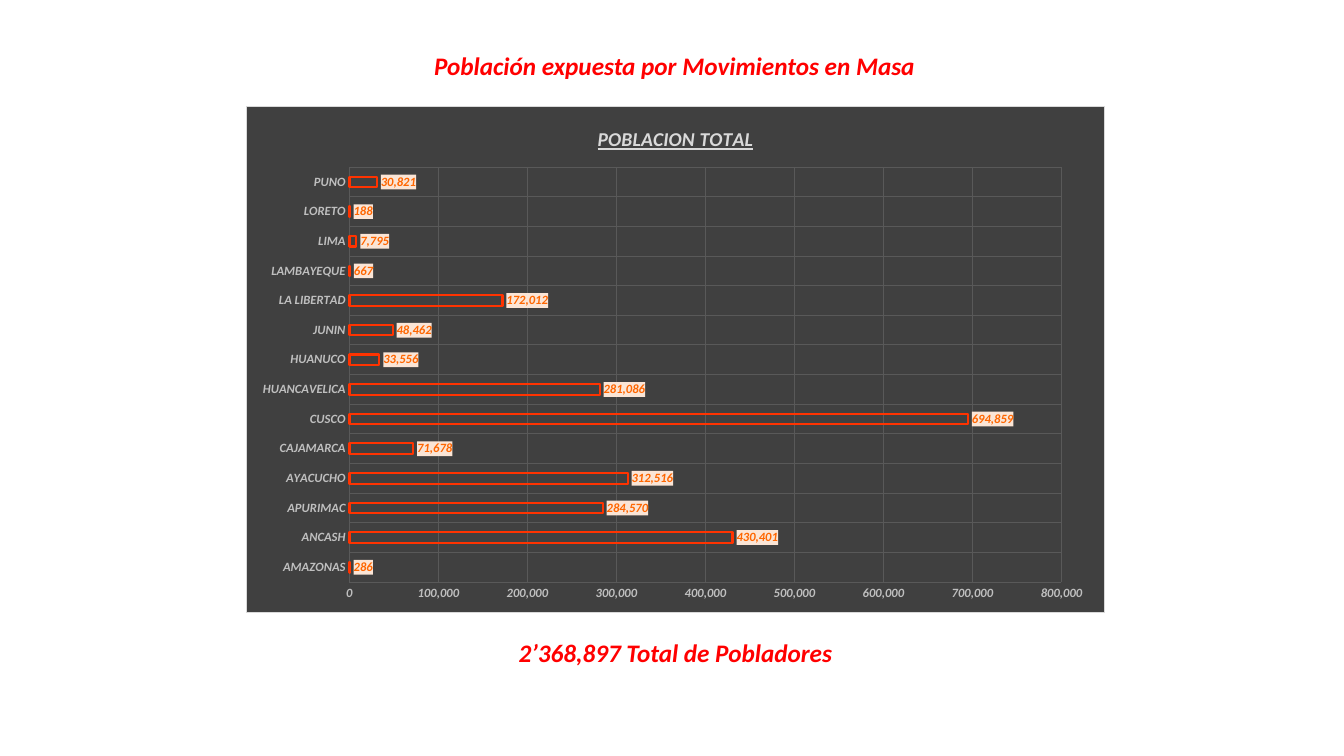
from lxml.etree import SubElement
from pptx import Presentation
from pptx.chart.data import CategoryChartData
from pptx.dml.color import RGBColor
from pptx.enum.chart import XL_CHART_TYPE, XL_LABEL_POSITION, XL_TICK_MARK
from pptx.enum.text import MSO_ANCHOR, MSO_AUTO_SIZE, PP_ALIGN
from pptx.oxml import parse_xml
from pptx.oxml.ns import nsdecls, qn
from pptx.util import Pt

PX = 914400 / 100.8
RED = RGBColor(0xFF, 0x00, 0x00)
FLAME = RGBColor(0xFF, 0x33, 0x00)
ORANGE = RGBColor(0xFF, 0x66, 0x00)
CREAM = RGBColor(0xFB, 0xE5, 0xD6)
DARK = RGBColor(0x40, 0x40, 0x40)
GRID = RGBColor(0x59, 0x59, 0x59)
SILVER = RGBColor(0xBF, 0xBF, 0xBF)
PALE = RGBColor(0xD9, 0xD9, 0xD9)

PEOPLE = {
    "AMAZONAS": 286, "ANCASH": 430401, "APURIMAC": 284570,
    "AYACUCHO": 312516, "CAJAMARCA": 71678, "CUSCO": 694859,
    "HUANCAVELICA": 281086, "HUANUCO": 33556, "JUNIN": 48462,
    "LA LIBERTAD": 172012, "LAMBAYEQUE": 667, "LIMA": 7795,
    "LORETO": 188, "PUNO": 30821,
}


def emu(*sizes):
    return [round(size * PX) for size in sizes]


def put(item, **values):
    for name, value in values.items():
        setattr(item, name, value)


def box_xml(fill, line=None):
    """Return chart shape properties with a solid fill and an optional thin border."""
    paint = '<a:solidFill><a:srgbClr val="{}"/></a:solidFill>'
    edge = f'<a:ln w="{Pt(0.75)}">{paint.format(line)}</a:ln>' if line else ""
    return parse_xml(f'<c:spPr {nsdecls("c", "a")}>{paint.format(fill)}{edge}</c:spPr>')


class Deck:
    face = {"name": "Calibri", "bold": True, "italic": True}

    def __init__(self, width, height):
        self.show = Presentation()
        self.show.slide_width, self.show.slide_height = emu(width, height)
        self.slide = self.show.slides.add_slide(self.show.slide_layouts[5])

    def font(self, font, size, color, **more):
        put(font, size=Pt(size), **self.face, **more)
        font.color.rgb = color

    def text(self, shape, words, place):
        put(shape, **dict(zip(("left", "top", "width", "height"), emu(*place))))
        frame = shape.text_frame
        frame.text = words
        put(frame, word_wrap=False, auto_size=MSO_AUTO_SIZE.SHAPE_TO_FIT_TEXT,
            vertical_anchor=MSO_ANCHOR.TOP)
        line = frame.paragraphs[0]
        line.alignment = PP_ALIGN.CENTER
        self.font(line.runs[0].font, 18, RED)

    def title(self, words, place):
        self.text(self.slide.shapes.title, words, place)

    def note(self, words, place):
        self.text(self.slide.shapes.add_textbox(*emu(*place)), words, place)

    def axis(self, axis):
        put(axis, has_major_gridlines=True, major_tick_mark=XL_TICK_MARK.NONE,
            minor_tick_mark=XL_TICK_MARK.NONE)
        axis.format.line.fill.background()
        grid = axis.major_gridlines.format.line
        grid.width = Pt(0.75)
        grid.color.rgb = GRID
        self.font(axis.tick_labels.font, 9, SILVER)

    def labels(self, plot):
        plot.has_data_labels = True
        tags = plot.data_labels
        put(tags, show_value=True, position=XL_LABEL_POSITION.OUTSIDE_END,
            number_format="#,##0", number_format_is_linked=False)
        self.font(tags.font, 9, ORANGE)
        tags.font._element.getparent().getparent().getparent().addprevious(box_xml(CREAM))

    def layout(self, chart, **place):
        """Fix the inner plot area as fractions of the chart."""
        area = chart.element.find(".//" + qn("c:plotArea"))
        for old in area.findall(qn("c:layout")):
            area.remove(old)
        frame = parse_xml(f'<c:layout {nsdecls("c")}><c:manualLayout/></c:layout>')
        area.insert(0, frame)
        modes = {"layoutTarget": "inner", "xMode": "edge", "yMode": "edge"}
        for name, value in (modes | place).items():
            SubElement(frame[0], qn("c:" + name)).set("val", str(value))

    def bars(self, name, values, place):
        data = CategoryChartData(number_format="#,##0")
        data.categories = list(values)
        data.add_series("Series 1", list(values.values()))
        chart = self.slide.shapes.add_chart(
            XL_CHART_TYPE.BAR_CLUSTERED, *emu(*place), data).chart
        put(chart, has_legend=False, has_title=True)
        put(chart.font, name="Calibri", size=Pt(10))
        chart.element.find(qn("c:txPr")).addprevious(box_xml(DARK, PALE))
        head = chart.chart_title.text_frame
        head.text = name
        self.font(head.paragraphs[0].runs[0].font, 14, PALE, underline=True)
        for axis in (chart.category_axis, chart.value_axis):
            self.axis(axis)
        put(chart.value_axis, minimum_scale=0, maximum_scale=800000, major_unit=100000)
        put(chart.value_axis.tick_labels, number_format="#,##0",
            number_format_is_linked=False)
        plot = chart.plots[0]
        put(plot, gap_width=182, overlap=-50, vary_by_categories=False)
        look = plot.series[0].format
        look.fill.background()
        look.line.width = Pt(1.5)
        look.line.color.rgb = FLAME
        self.labels(plot)
        self.layout(chart, x=0.12, y=0.12, w=0.83, h=0.82)


def main():
    deck = Deck(1344, 756)
    deck.title("Población expuesta por Movimientos en Masa", (421, 45, 507, 40))
    deck.bars("POBLACION TOTAL", PEOPLE, (246, 106, 859, 507))
    deck.note("2’368,897 Total de Pobladores", (507, 632, 337, 40))
    deck.show.save("out.pptx")


if __name__ == "__main__":
    main()
